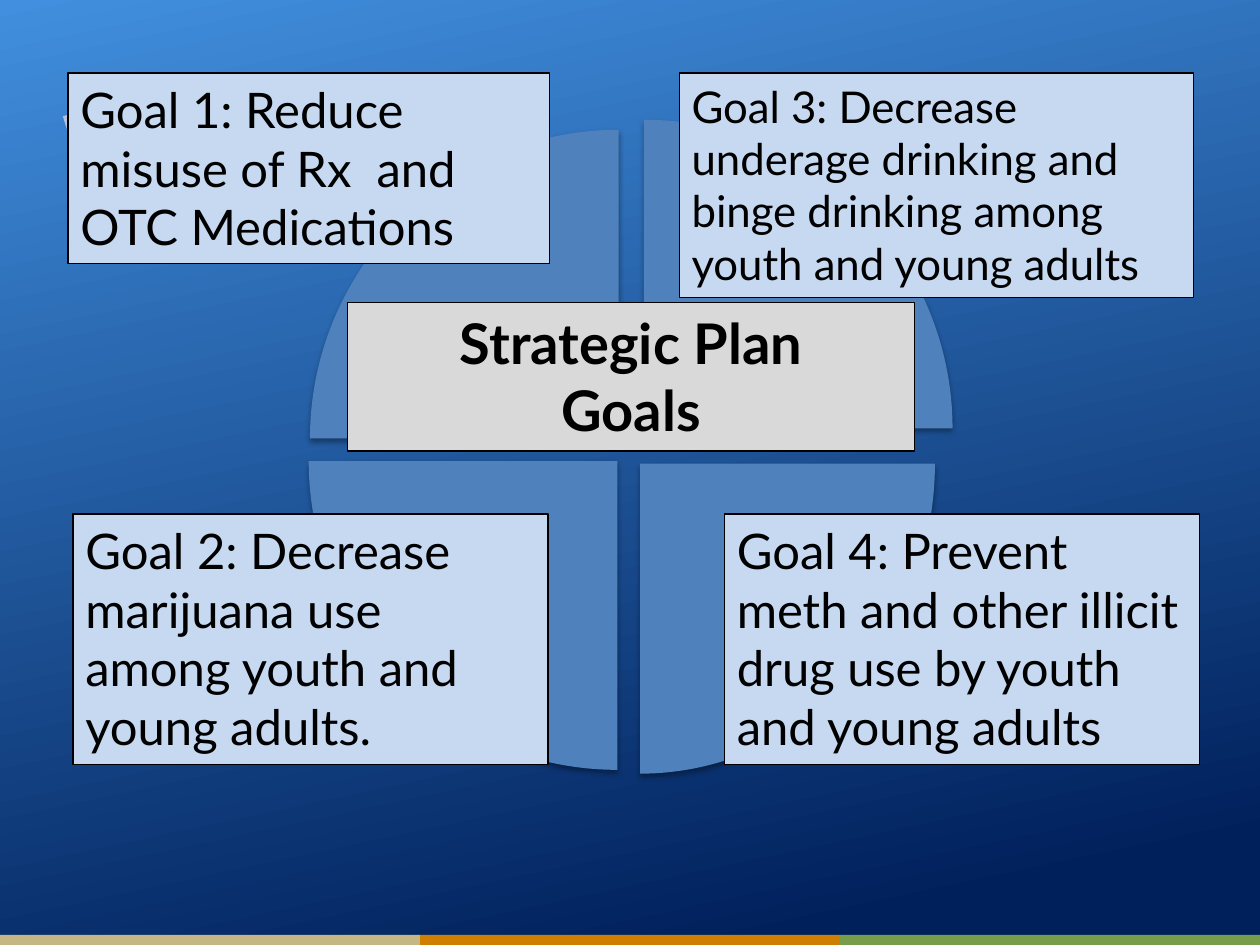
from typing import NamedTuple

from lxml import etree
from pptx import Presentation
from pptx.dml import color as dml
from pptx.enum import shapes, text
from pptx.oxml import ns
from pptx.util import Inches, Pt

FONT = "Lato"
GOAL_FILL = "C6D9F1"


class Wedge(NamedTuple):
    left: float
    top: float
    width: float
    height: float
    rotation: float


class Label(NamedTuple):
    wording: str
    left: float
    top: float
    width: float
    height: float
    size: float = 28
    fill: str = GOAL_FILL
    centred_bold: bool = False


WEDGES = [
    Wedge(2.46, 1.03, 2.45, 2.45, 0),
    Wedge(5.11, 0.95, 2.45, 2.45, 90),
    Wedge(5.08, 3.68, 2.34, 2.46, 180),
    Wedge(2.45, 3.66, 2.45, 2.45, 270),
]
LABELS = [
    Label("Goal 3: Decrease underage drinking and binge drinking among youth and young adults",
          5.39, 0.58, 4.08, 1.78, size=25),
    Label("Goal 2: Decrease marijuana use among youth and young adults.",
          0.58, 4.08, 3.77, 1.99),
    Label("Goal 1: Reduce misuse of Rx  and OTC Medications",
          0.54, 0.58, 3.82, 1.51),
    Label("Goal 4: Prevent meth and other illicit drug use by youth and young adults",
          5.75, 4.08, 3.77, 1.99),
    Label("Strategic Plan\nGoals", 2.76, 2.4, 4.5, 1.18,
          size=32, fill="D9D9D9", centred_bold=True),
]
STRIPES = ["C5B783", "CF7F00", "789D4A"]


def rgb(hex_colour: str) -> dml.RGBColor:
    return dml.RGBColor.from_string(hex_colour)


def paint(shape, hex_colour: str) -> None:
    shape.fill.solid()
    shape.fill.fore_color.rgb = rgb(hex_colour)


def add_plain(slide, preset, left: float, top: float, width: float, height: float):
    """Add a preset shape without outline or shadow."""
    shape = slide.shapes.add_shape(
        preset, Inches(left), Inches(top), Inches(width), Inches(height))
    shape.shadow.inherit = False
    shape.line.fill.background()
    return shape


def add_backdrop(slide) -> None:
    backdrop = add_plain(slide, shapes.MSO_SHAPE.RECTANGLE, 0, 0, 10, 7.5)
    backdrop.fill.gradient()
    backdrop.fill.gradient_angle = 102
    stops = [(0.09, "00205B"), (1, "418FDE")]
    for stop, (position, colour) in zip(backdrop.fill.gradient_stops, stops):
        stop.position = position
        stop.color.rgb = rgb(colour)

    stripe_width = 10 / len(STRIPES)
    for index, colour in enumerate(STRIPES):
        stripe = add_plain(slide, shapes.MSO_SHAPE.RECTANGLE,
                           index * stripe_width, 7.42, stripe_width, 0.08)
        paint(stripe, colour)


def add_soft_shadow(shape) -> None:
    effects = shape._element.spPr.find(ns.qn("a:effectLst"))
    shadow = etree.SubElement(
        effects, ns.qn("a:outerShdw"), blurRad=str(Pt(3.1)), dist=str(Pt(1.8)),
        dir="5400000", rotWithShape="0")
    black = etree.SubElement(shadow, ns.qn("a:srgbClr"), val="000000")
    etree.SubElement(black, ns.qn("a:alpha"), val="35000")


def add_wedge(slide, wedge: Wedge) -> None:
    shape = add_plain(slide, shapes.MSO_SHAPE.PIE_WEDGE, *wedge[:4])
    shape.rotation = wedge.rotation
    paint(shape, "4F81BD")
    add_soft_shadow(shape)


def add_cycle_arrow(slide) -> None:
    arrow = add_plain(slide, shapes.MSO_SHAPE.CIRCULAR_ARROW, 0.44, -0.38, 0.73, 2.42)
    arrow.rotation = 163.2
    arrow._element.spPr.xfrm.set("flipH", "1")
    paint(arrow, "B3C1DB")


def add_label(slide, label: Label) -> None:
    box = slide.shapes.add_textbox(
        Inches(label.left), Inches(label.top), Inches(label.width), Inches(label.height))
    paint(box, label.fill)
    box.line.color.rgb = rgb("000000")
    box.line.width = Pt(0.75)
    frame = box.text_frame
    frame.word_wrap = True
    frame.auto_size = text.MSO_AUTO_SIZE.SHAPE_TO_FIT_TEXT
    frame.text = label.wording
    for paragraph in frame.paragraphs:
        if label.centred_bold:
            paragraph.alignment = text.PP_ALIGN.CENTER
        for run in paragraph.runs:
            run.font.name = FONT
            run.font.size = Pt(label.size)
            run.font.bold = label.centred_bold
            run.font.color.rgb = rgb("000000")


def main() -> None:
    deck = Presentation()
    deck.slide_width, deck.slide_height = Inches(10), Inches(7.5)
    slide = deck.slides.add_slide(deck.slide_layouts[6])
    add_backdrop(slide)
    for wedge in WEDGES:
        add_wedge(slide, wedge)
    add_cycle_arrow(slide)
    for label in LABELS:
        add_label(slide, label)
    deck.save("out.pptx")


if __name__ == "__main__":
    main()
